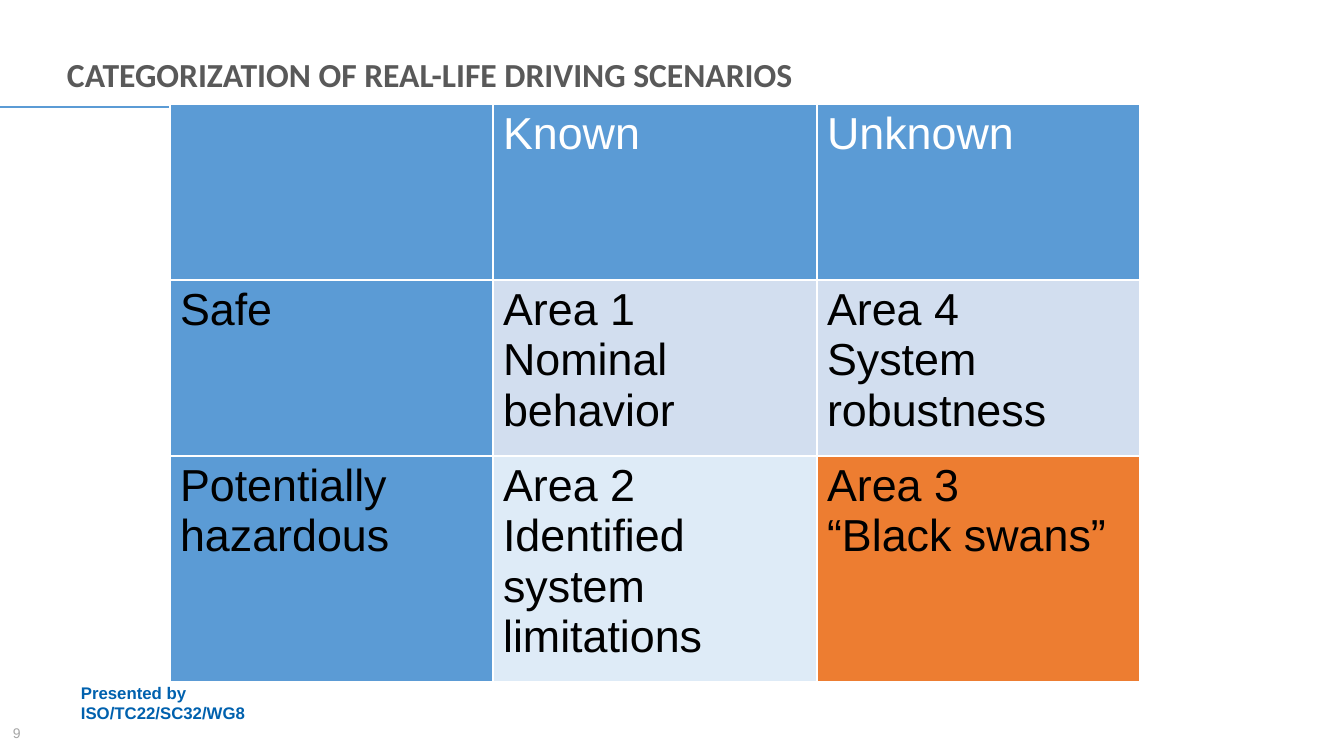
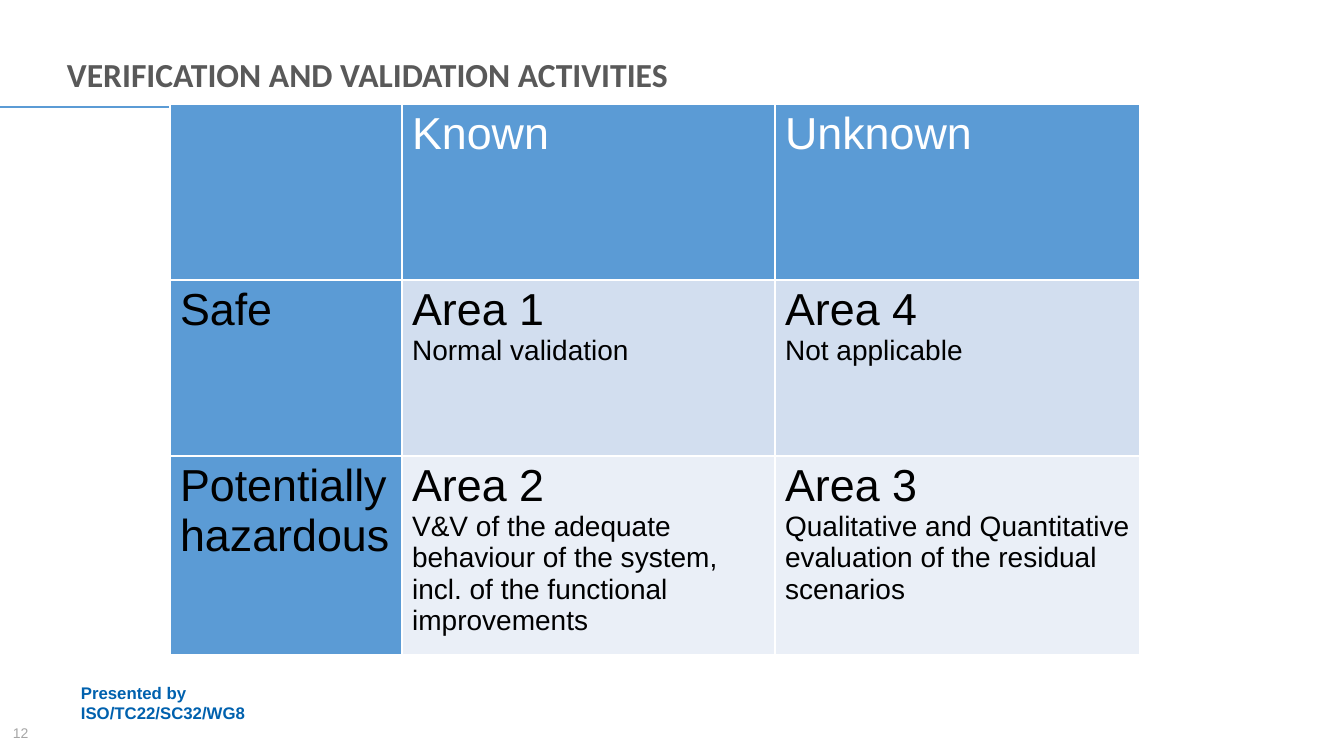
import pptx
import pptx.util
import pptx.dml.color
import pptx.enum.shapes
import pptx.enum.text
import pptx.oxml.ns
import lxml.etree

RGBColor = pptx.dml.color.RGBColor
WHITE = RGBColor(0xFF, 0xFF, 0xFF)
BLACK = RGBColor(0x00, 0x00, 0x00)
HEADER_BLUE = RGBColor(0x5B, 0x9B, 0xD5)
BAND_BLUE = RGBColor(0xD2, 0xDE, 0xEF)
LIGHT_BLUE = RGBColor(0xDE, 0xEB, 0xF7)
PALE_BLUE = RGBColor(0xEA, 0xEF, 0xF7)
ALERT_ORANGE = RGBColor(0xED, 0x7D, 0x31)
TITLE_GRAY = RGBColor(0x59, 0x59, 0x59)
FOOTER_BLUE = RGBColor(0x00, 0x61, 0xAE)
NUMBER_GRAY = RGBColor(0xA6, 0xA6, 0xA6)

EMU_PER_PX = 914400 / 100.8
SLIDE_WIDTH, SLIDE_HEIGHT = 1344, 756
TITLE_BOX = (67, 50, 1074, 54)
FOOTER_BOX = (71, 683, 275, 40)
NUMBER_BOX = (3, 713, 106, 40)
RULE_TOP = 107
TABLE_LEFT, TABLE_TOP = 170, 104
ROW_HEIGHT = 176
HEADING_SIZE = 32

COLUMN_HEADINGS = ["Known", "Unknown"]
ROW_HEADINGS = ["Safe", "Potentially hazardous"]

SLIDES = [
    {
        "title": "CATEGORIZATION OF REAL-LIFE DRIVING SCENARIOS",
        "number": "9",
        "columns": [323, 324, 323],
        "last_row": 210,
        "detail_size": 32,
        "areas": [
            [("Area 1", "Nominal behavior", BAND_BLUE),
             ("Area 4", "System robustness", BAND_BLUE)],
            [("Area 2", "Identified system limitations", LIGHT_BLUE),
             ("Area 3", "“Black swans”", ALERT_ORANGE)],
        ],
    },
    {
        "title": "VERIFICATION AND VALIDATION ACTIVITIES",
        "number": "12",
        "columns": [232, 373, 365],
        "last_row": 185,
        "detail_size": 20,
        "areas": [
            [("Area 1", "Normal validation", BAND_BLUE),
             ("Area 4", "Not applicable", BAND_BLUE)],
            [("Area 2", "V&V of the adequate behaviour of the system, "
                        "incl. of the functional improvements", PALE_BLUE),
             ("Area 3", "Qualitative and Quantitative evaluation of the "
                        "residual scenarios", PALE_BLUE)],
        ],
    },
]


def px(length):
    return pptx.util.Emu(round(length * EMU_PER_PX))


def add_run(paragraph, text, size, color, font="Arial", bold=False):
    run = paragraph.add_run()
    run.text = text
    run.font.name = font
    run.font.size = pptx.util.Pt(size)
    run.font.bold = bold
    run.font.color.rgb = color


def add_text(slide, box, text, size, color, font="Arial", bold=False):
    shape = slide.shapes.add_textbox(*map(px, box))
    frame = shape.text_frame
    frame.word_wrap = True
    frame.vertical_anchor = pptx.enum.text.MSO_ANCHOR.MIDDLE
    add_run(frame.paragraphs[0], text, size, color, font, bold)
    return frame


def add_frame(slide, title, number):
    add_text(slide, FOOTER_BOX, "Presented by ISO/TC22/SC32/WG8",
             12, FOOTER_BLUE, bold=True)
    rule = slide.shapes.add_connector(
        pptx.enum.shapes.MSO_CONNECTOR.STRAIGHT,
        px(0), px(RULE_TOP), px(SLIDE_WIDTH // 2), px(RULE_TOP))
    rule.line.color.rgb = HEADER_BLUE
    rule.line.width = pptx.util.Pt(1)
    lxml.etree.SubElement(rule._element.spPr, pptx.oxml.ns.qn("a:effectLst"))
    title_frame = add_text(slide, TITLE_BOX, title, 24, TITLE_GRAY,
                           "Calibri", True)
    title_frame.margin_left = 0
    title_frame.margin_right = px(12)
    title_frame.margin_top = title_frame.margin_bottom = px(4)
    title_frame.paragraphs[0].line_spacing = 0.9
    add_text(slide, NUMBER_BOX, number, 10, NUMBER_GRAY)


def set_borders(cell):
    properties = cell._tc.get_or_add_tcPr()
    for side in ("lnL", "lnR", "lnT", "lnB"):
        line = lxml.etree.SubElement(
            properties, pptx.oxml.ns.qn("a:" + side), w=str(pptx.util.Pt(1)))
        fill = lxml.etree.SubElement(line, pptx.oxml.ns.qn("a:solidFill"))
        lxml.etree.SubElement(fill, pptx.oxml.ns.qn("a:srgbClr"),
                              val=str(WHITE))


def fill_cell(cell, fill, color, lines):
    set_borders(cell)
    cell.fill.solid()
    cell.fill.fore_color.rgb = fill
    frame = cell.text_frame
    for index, (text, size) in enumerate(lines):
        paragraph = frame.add_paragraph() if index else frame.paragraphs[0]
        add_run(paragraph, text, size, color)


def add_area_table(slide, left, top, columns, last_row, detail_size, areas):
    heights = [ROW_HEIGHT, ROW_HEIGHT, last_row]
    table = slide.shapes.add_table(
        len(heights), len(columns), px(left), px(top),
        px(sum(columns)), px(sum(heights))).table
    table.first_row = False
    table.horz_banding = False
    for column, width in zip(table.columns, columns):
        column.width = px(width)
    for row, height in zip(table.rows, heights):
        row.height = px(height)

    fill_cell(table.cell(0, 0), HEADER_BLUE, WHITE, [])
    for column, heading in enumerate(COLUMN_HEADINGS, 1):
        fill_cell(table.cell(0, column), HEADER_BLUE, WHITE,
                  [(heading, HEADING_SIZE)])
    for row, (heading, row_areas) in enumerate(zip(ROW_HEADINGS, areas), 1):
        fill_cell(table.cell(row, 0), HEADER_BLUE, BLACK,
                  [(heading, HEADING_SIZE)])
        for column, (name, detail, fill) in enumerate(row_areas, 1):
            fill_cell(table.cell(row, column), fill, BLACK,
                      [(name, HEADING_SIZE), (detail, detail_size)])


def main():
    presentation = pptx.Presentation()
    presentation.slide_width = px(SLIDE_WIDTH)
    presentation.slide_height = px(SLIDE_HEIGHT)
    for content in SLIDES:
        slide = presentation.slides.add_slide(presentation.slide_layouts[6])
        add_frame(slide, content["title"], content["number"])
        add_area_table(slide, TABLE_LEFT, TABLE_TOP, content["columns"],
                       content["last_row"], content["detail_size"],
                       content["areas"])
    presentation.save("out.pptx")


if __name__ == "__main__":
    main()
